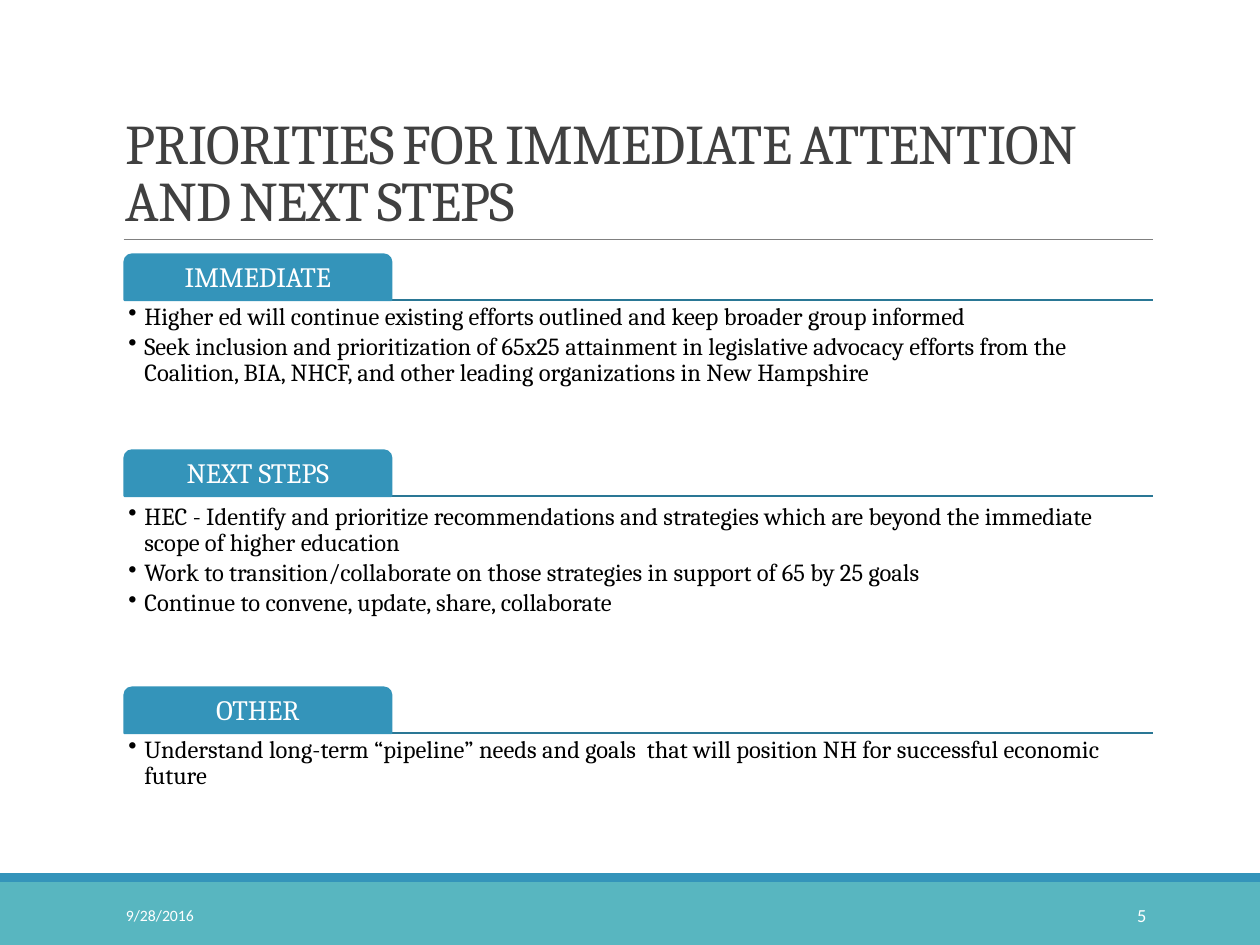
from dataclasses import dataclass
from lxml.etree import SubElement
from pptx import Presentation
from pptx.dml.color import RGBColor as RGB
from pptx.enum.shapes import MSO_CONNECTOR as Link, MSO_SHAPE as Shape
from pptx.enum.text import MSO_ANCHOR as Anchor, PP_ALIGN as Align
from pptx.oxml.ns import qn
from pptx.util import Cm, Pt


@dataclass(frozen=True)
class Theme:
    """Colours, fonts and type sizes of the deck."""
    blue: str = "3494BA"
    deep: str = "2A7795"
    teal: str = "58B6C0"
    grey: str = "808080"
    dark: str = "404040"
    black: str = "000000"
    white: str = "FFFFFF"
    serif: str = "Cambria"
    sans: str = "Calibri"
    title: float = 32
    label: float = 16
    body: float = 14
    page: float = 10.5
    date: float = 9


THEME = Theme()
WIDE, HIGH = 25.4, 19.05
LEFT, SPAN = 2.51, 20.73
TITLE = "PRIORITIES FOR IMMEDIATE ATTENTION AND NEXT STEPS"
PARTS = [
    ("IMMEDIATE", 5.13, 0, 3.1, [
        "Higher ed will continue existing efforts outlined and keep broader group informed",
        "Seek inclusion and prioritization of 65x25 attainment in legislative advocacy efforts "
        "from the Coalition, BIA, NHCF, and other leading organizations in New Hampshire"]),
    ("NEXT STEPS", 9.08, 0.08, 3.7, [
        "HEC - Identify and prioritize recommendations and strategies which are beyond the "
        "immediate scope of higher education",
        "Work to transition/collaborate on those strategies in support of 65 by 25 goals",
        "Continue to convene, update, share, collaborate"]),
    ("OTHER", 13.86, 0, 1.83, [
        "Understand long-term “pipeline” needs and goals  that will position NH for "
        "successful economic future"]),
]


def write(shape, lines, size, color, face=THEME.serif, align=Align.LEFT,
          anchor=Anchor.MIDDLE, inset=None, lead=None, after=0):
    """Fill a shape with evenly styled paragraphs and return them."""
    frame = shape.text_frame
    frame.word_wrap = True
    frame.vertical_anchor = anchor
    if inset is not None:
        frame.margin_left = frame.margin_right = Cm(inset)
        frame.margin_top = frame.margin_bottom = Cm(inset)
    frame.text = "\n".join(lines)
    for para in frame.paragraphs:
        para.alignment, para.line_spacing, para.space_after = align, lead, Pt(after)
        para.font.name, para.font.size = face, Pt(size)
        para.font.color.rgb = RGB.from_string(color)
    return frame.paragraphs


def add_text(slide, box, lines, size, color, **style):
    """Add a text box and return its paragraphs."""
    return write(slide.shapes.add_textbox(*map(Cm, box)), lines, size, color, **style)


def add_block(slide, kind, box, color):
    """Add a flat shape in one colour."""
    block = slide.shapes.add_shape(kind, *map(Cm, box))
    block.shadow.inherit = False
    block.fill.solid()
    block.fill.fore_color.rgb = RGB.from_string(color)
    block.line.fill.background()
    return block


def add_rule(slide, left, top, width, color, weight):
    """Add a level line without a shadow."""
    rule = slide.shapes.add_connector(Link.STRAIGHT, *map(Cm, (left, top, left + width, top)))
    rule.line.color.rgb = RGB.from_string(color)
    rule.line.width = Pt(weight)
    SubElement(rule._element.spPr, qn("a:effectLst"))


def add_bullet(para, indent):
    """Give a paragraph a hanging bullet."""
    props = para._p.get_or_add_pPr()
    props.set("marL", str(Cm(indent)))
    props.set("indent", str(-Cm(indent)))
    SubElement(props, qn("a:buChar")).set("char", "•")


def add_head(slide, left, top, width, height):
    """Place the title above its thin rule."""
    para, = add_text(slide, (left, top, width, height), [TITLE], THEME.title, THEME.dark,
                     anchor=Anchor.BOTTOM, lead=0.85)
    props = para.runs[0]._r.get_or_add_rPr()
    props.set("spc", "-50")
    props.set("cap", "small")
    add_rule(slide, left + 0.2, top + height, width - 0.2, THEME.grey, 0.5)


def add_part(slide, left, top, width, label, gap, height, points):
    """Place a tab on a rule with its bullet list below."""
    tab_w, tab_h = 5.38, 0.92
    add_rule(slide, left, top + tab_h, width, THEME.deep, 1.25)
    tab = add_block(slide, Shape.ROUND_2_SAME_RECTANGLE, (left, top, tab_w, tab_h), THEME.blue)
    tab.line.color.rgb = RGB.from_string(THEME.blue)
    tab.line.width = Pt(1.25)
    write(tab, [label], THEME.label, THEME.white, align=Align.CENTER, inset=0.08, lead=0.9)
    box = left, top + tab_h + gap, width, height
    for para in add_text(slide, box, points, THEME.body, THEME.black,
                         anchor=Anchor.TOP, inset=0.08, lead=0.9, after=2):
        add_bullet(para, 0.32)


def add_foot(slide, left, top, width, height):
    """Place the footer bands with date and page number."""
    strip = 0.18
    add_block(slide, Shape.RECTANGLE, (left, top + strip, width, height - strip), THEME.teal)
    add_block(slide, Shape.RECTANGLE, (left, top, width, strip), THEME.blue)
    add_text(slide, (left + 2.29, top + 0.34, 5.16, 1.02), ["9/28/2016"],
             THEME.date, THEME.white, face=THEME.sans)
    add_text(slide, (left + 20.62, top + 0.34, 2.74, 1.02), ["5"],
             THEME.page, THEME.white, face=THEME.sans, align=Align.RIGHT)


def main():
    """Build and save the slide."""
    deck = Presentation()
    deck.slide_width, deck.slide_height = Cm(WIDE), Cm(HIGH)
    slide = deck.slides.add_slide(deck.slide_layouts[6])
    add_foot(slide, 0, 17.6, WIDE, HIGH - 17.6)
    add_head(slide, 2.29, 0.79, 20.95, 4.04)
    for label, top, gap, height, points in PARTS:
        add_part(slide, LEFT, top, SPAN, label, gap, height, points)
    deck.save("out.pptx")


if __name__ == "__main__":
    main()
